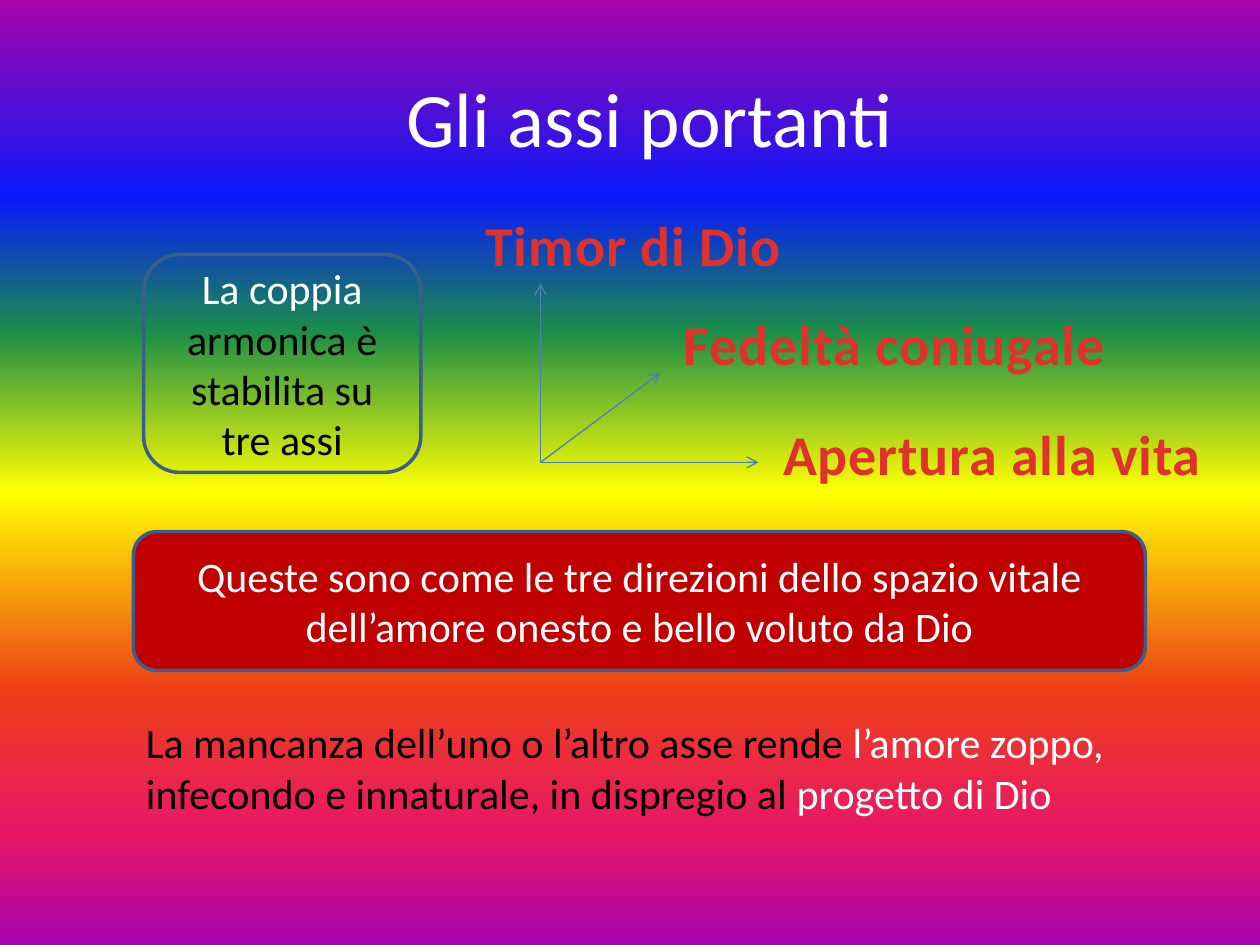
from lxml.etree import SubElement
from pptx import Presentation
from pptx.dml.color import RGBColor
from pptx.enum.shapes import MSO_CONNECTOR, MSO_SHAPE
from pptx.enum.text import MSO_ANCHOR, MSO_AUTO_SIZE, PP_ALIGN
from pptx.oxml.ns import qn
from pptx.util import Inches, Pt

COLORS = {"white": "FFFFFF", "black": "000000", "banner": "C00000",
          "outline": "3A5F8C", "axis": "4B7EBC"}
RAINBOW = [(0, "A603AB"), (21, "0819FB"), (35, "1A8D48"), (52, "FFFF00"),
           (73, "EE3F17"), (88, "E81766"), (100, "A603AB")]
LABEL_RED = [(25, "E0322D"), (100, "A2201C")]
TITLE_FONT = {"name": "Calibri", "size": Pt(44)}
BODY_FONT = {"name": "Calibri", "size": Pt(24)}
LABEL_FONT = {"name": "Calibri", "size": Pt(32), "bold": True}


def apply_gradient(fill, owner, stops):
    """Run a gradient from top to bottom through any number of stops."""
    fill.gradient()
    fill.gradient_angle = 270
    stop_list = owner.find(".//" + qn("a:gsLst"))
    for old_stop in list(stop_list):
        stop_list.remove(old_stop)
    for percent, color in stops:
        stop = SubElement(stop_list, qn("a:gs"), pos=str(percent * 1000))
        SubElement(stop, qn("a:srgbClr"), val=color)


def write_runs(frame, runs, font_format, align=PP_ALIGN.CENTER):
    """Write one paragraph from (text, color name) pairs; None keeps the color open."""
    paragraph = frame.paragraphs[0]
    paragraph.alignment = align
    for text, color in runs:
        run = paragraph.add_run()
        run.text = text
        for attribute, value in font_format.items():
            setattr(run.font, attribute, value)
        if color:
            run.font.color.rgb = RGBColor.from_string(COLORS[color])
    return run


presentation = Presentation()
presentation.slide_width, presentation.slide_height = Inches(10), Inches(7.5)
slide = presentation.slides.add_slide(presentation.slide_layouts[5])

# Rainbow background
apply_gradient(slide.background.fill, slide.element, RAINBOW)

# Title
title = slide.shapes.title
title.left, title.top = Inches(2.32), Inches(0.3)
title.width, title.height = Inches(5.67), Inches(1.25)
title.text_frame.vertical_anchor = MSO_ANCHOR.MIDDLE
write_runs(title.text_frame, [("Gli assi portanti", "white")], TITLE_FONT)

# Rounded panels: the couple and the three directions
panels = [
    ((1.14, 2.02, 2.2, 1.73), None,
     [("La coppia ", "white"), ("armonica è stabilita su tre assi", "black")]),
    ((1.06, 4.22, 8.03, 1.1), "banner",
     [("Queste sono come le tre direzioni dello spazio vitale "
       "dell’amore onesto e bello voluto da Dio", "white")]),
]
for place, fill_color, runs in panels:
    panel = slide.shapes.add_shape(MSO_SHAPE.ROUNDED_RECTANGLE, *map(Inches, place))
    panel.shadow.inherit = False
    if fill_color:
        panel.fill.solid()
        panel.fill.fore_color.rgb = RGBColor.from_string(COLORS[fill_color])
    else:
        panel.fill.background()
    panel.line.color.rgb = RGBColor.from_string(COLORS["outline"])
    panel.line.width = Pt(2)
    panel.text_frame.word_wrap = True
    panel.text_frame.vertical_anchor = MSO_ANCHOR.MIDDLE
    write_runs(panel.text_frame, runs, BODY_FONT)

# Three axes from a common origin, each with its label
ORIGIN = (4.29, 3.67)
axes = [
    ("Timor di Dio", (4.29, 2.25), (3.74, 1.62, 2.57, 0.64)),
    ("Fedeltà coniugale", (5.24, 2.96), (5.31, 2.41, 3.58, 0.64)),
    ("Apertura alla vita", (6.02, 3.67), (6.1, 3.28, 3.55, 0.64)),
]
for name, tip, place in axes:
    axis = slide.shapes.add_connector(MSO_CONNECTOR.STRAIGHT, *map(Inches, ORIGIN + tip))
    axis.line.color.rgb = RGBColor.from_string(COLORS["axis"])
    axis.line.width = Pt(0.75)
    SubElement(axis.line._get_or_add_ln(), qn("a:tailEnd"), type="arrow")
    SubElement(axis._element.spPr, qn("a:effectLst"))

    label = slide.shapes.add_textbox(*map(Inches, place))
    label.text_frame.word_wrap = False
    label.text_frame.auto_size = MSO_AUTO_SIZE.SHAPE_TO_FIT_TEXT
    label_run = write_runs(label.text_frame, [(name, None)], LABEL_FONT)
    apply_gradient(label_run.font.fill, label_run._r, LABEL_RED)
    label_run._r.get_or_add_rPr().set("spc", "50")

# Closing remark
remark = slide.shapes.add_textbox(Inches(1.06), Inches(5.64), Inches(7.95), Inches(0.91))
remark.text_frame.word_wrap = True
remark.text_frame.auto_size = MSO_AUTO_SIZE.SHAPE_TO_FIT_TEXT
write_runs(remark.text_frame, [
    ("La mancanza dell’uno o l’altro asse rende ", "black"),
    ("l’amore zoppo,", "white"),
    (" infecondo e innaturale, in dispregio al ", "black"),
    ("progetto di Dio", "white"),
], BODY_FONT, PP_ALIGN.LEFT)

presentation.save("out.pptx")
